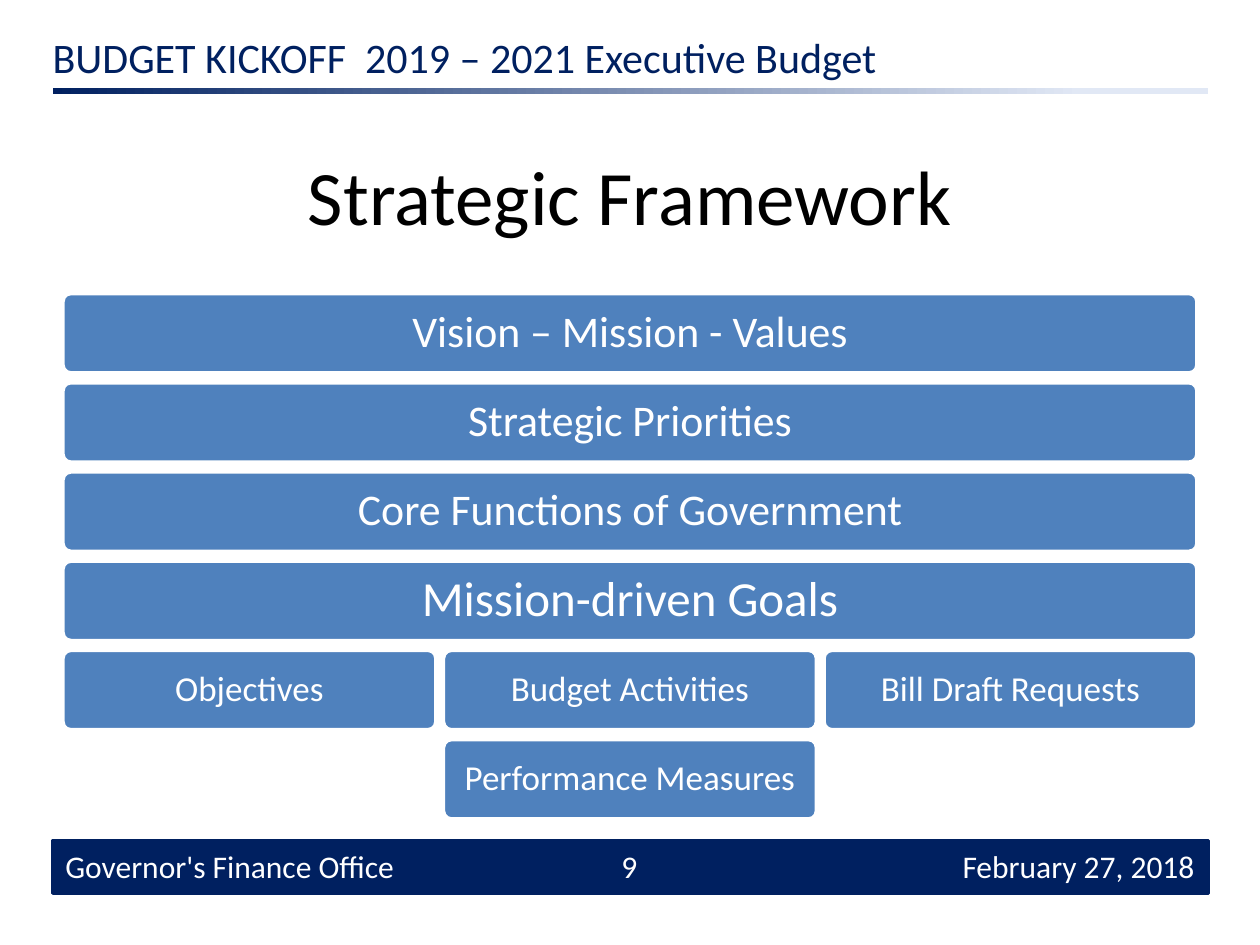
from pptx import Presentation
from pptx.dml.color import RGBColor
from pptx.enum.shapes import MSO_SHAPE as Shape
from pptx.enum.text import MSO_ANCHOR as Anchor, PP_ALIGN as Align
from pptx.util import Inches, Pt

NAVY = RGBColor(0x00, 0x20, 0x60)
PALE_BLUE = RGBColor(0xE1, 0xE8, 0xF5)
BLUE = RGBColor(0x4F, 0x81, 0xBD)
WHITE = RGBColor(0xFF, 0xFF, 0xFF)
BLACK = RGBColor(0x00, 0x00, 0x00)

# Framework grid, in inches
GRID_LEFT, GRID_TOP, GRID_WIDTH = 0.5, 2.33, 9
COLUMNS, COLUMN_GAP = 3, 0.06
COLUMN_WIDTH = (GRID_WIDTH - (COLUMNS - 1) * COLUMN_GAP) / COLUMNS
ROW_HEIGHT, ROW_PITCH = 0.63, 0.708

# Frame shared by the header rule and the footer
FRAME_LEFT, FRAME_WIDTH = 0.42, 9.17
FOOTER_TOP = 6.67

# Text, row, first column, columns spanned, font size
FRAMEWORK = [
    ("Vision – Mission - Values", 0, 0, 3, 25),
    ("Strategic Priorities", 1, 0, 3, 25),
    ("Core Functions of Government", 2, 0, 3, 25),
    ("Mission-driven Goals", 3, 0, 3, 28),
    ("Objectives", 4, 0, 1, 20),
    ("Budget Activities", 4, 1, 1, 20),
    ("Bill Draft Requests", 4, 2, 1, 20),
    ("Performance Measures", 5, 1, 1, 20),
]

# Text, left, width, alignment
FOOTER = [
    ("Governor's Finance Office", 0.42, 4.58, Align.LEFT),
    ("9", 3.83, 2.33, Align.CENTER),
    ("February 27, 2018", 7.25, 2.33, Align.RIGHT),
]


def box(left, top, width, height):
    return [Inches(length) for length in (left, top, width, height)]


def write(shape, text, size, color=WHITE, align=Align.CENTER, spacing=None):
    frame = shape.text_frame
    frame.word_wrap = True
    frame.vertical_anchor = Anchor.MIDDLE
    frame.margin_left = frame.margin_right = Inches(0.1)
    frame.margin_top = frame.margin_bottom = 0
    paragraph = frame.paragraphs[0]
    paragraph.alignment = align
    paragraph.line_spacing = spacing
    run = paragraph.add_run()
    run.text = text
    run.font.name = "Calibri"
    run.font.size = Pt(size)
    run.font.color.rgb = color


def add_label(slide, place, text, size, **text_format):
    write(slide.shapes.add_textbox(*box(*place)), text, size, **text_format)


def add_block(slide, kind, place, fill, line):
    block = slide.shapes.add_shape(kind, *box(*place))
    block.shadow.inherit = False
    block.fill.solid()
    block.fill.fore_color.rgb = fill
    block.line.color.rgb = line
    block.line.width = Pt(2)
    return block


def add_header_rule(slide):
    place = box(FRAME_LEFT, 0.7, FRAME_WIDTH, 0.05)
    rule = slide.shapes.add_shape(Shape.RECTANGLE, *place)
    rule.shadow.inherit = False
    rule.line.fill.background()
    rule.fill.gradient()
    rule.fill.gradient_angle = 0
    fade = [(0, NAVY), (0.89, PALE_BLUE)]
    for stop, (position, color) in zip(rule.fill.gradient_stops, fade):
        stop.position = position
        stop.color.rgb = color


def add_framework_bar(slide, text, row, column, span, size):
    place = (
        GRID_LEFT + column * (COLUMN_WIDTH + COLUMN_GAP),
        GRID_TOP + row * ROW_PITCH,
        span * COLUMN_WIDTH + (span - 1) * COLUMN_GAP,
        ROW_HEIGHT,
    )
    bar = add_block(slide, Shape.ROUNDED_RECTANGLE, place, BLUE, WHITE)
    bar.adjustments[0] = 0.1
    write(bar, text, size, spacing=0.9)


def main():
    deck = Presentation()
    deck.slide_width, deck.slide_height = Inches(10), Inches(7.5)
    slide = deck.slides.add_slide(deck.slide_layouts[6])

    # Header and title
    add_header_rule(slide)
    add_label(slide, (0.32, 0.25, 9.27, 0.4),
              "BUDGET KICKOFF  2019 – 2021 Executive Budget", 24,
              color=NAVY, align=Align.LEFT)
    add_label(slide, (0.5, 0.92, 9, 1.25), "Strategic Framework", 44,
              color=BLACK)

    # Framework levels
    for level in FRAMEWORK:
        add_framework_bar(slide, *level)

    # Footer band
    add_block(slide, Shape.RECTANGLE,
              (FRAME_LEFT, FOOTER_TOP, FRAME_WIDTH, 0.42), NAVY, NAVY)
    for text, left, width, align in FOOTER:
        add_label(slide, (left, FOOTER_TOP, width, 0.4), text, 18, align=align)

    deck.save("out.pptx")


if __name__ == "__main__":
    main()
